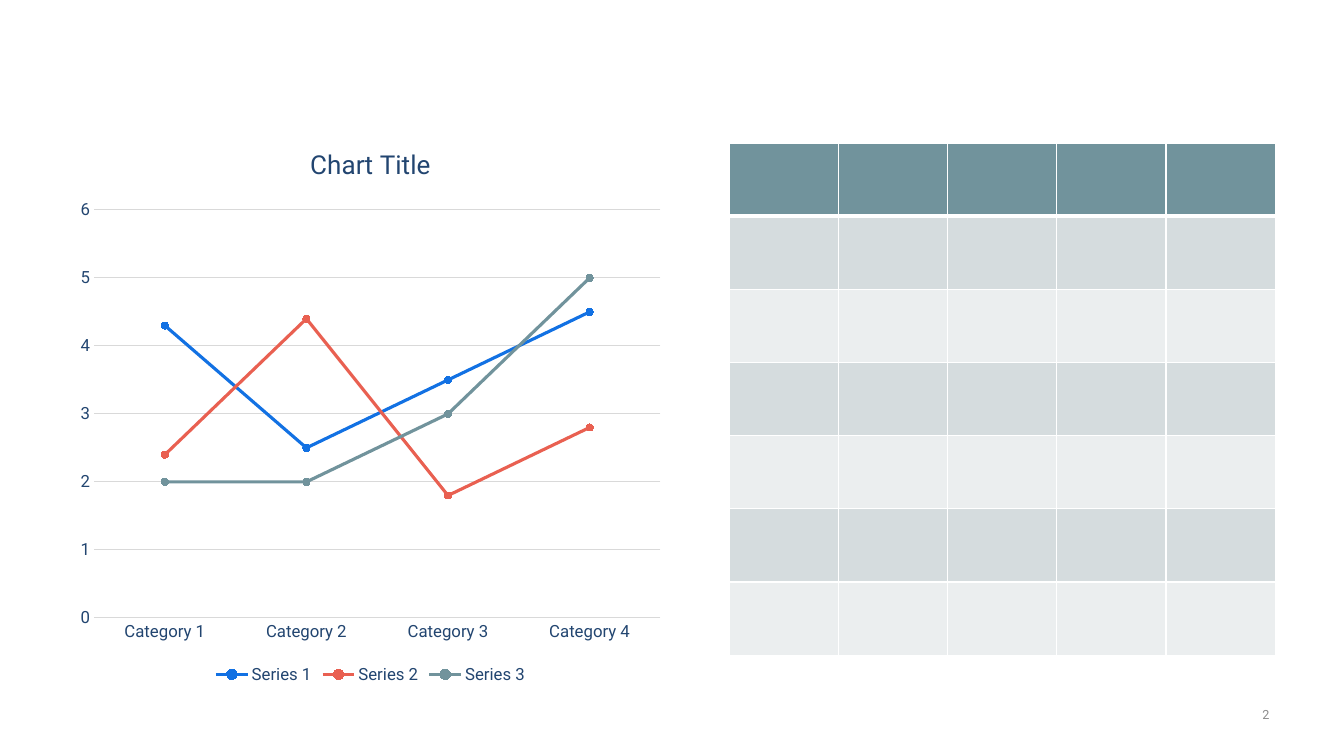
from lxml import etree
from pptx import Presentation
from pptx.chart.data import CategoryChartData
from pptx.dml.color import RGBColor
from pptx.enum.chart import XL_CHART_TYPE, XL_LEGEND_POSITION, XL_MARKER_STYLE, XL_TICK_MARK
from pptx.enum.text import PP_ALIGN
from pptx.oxml.ns import qn
from pptx.util import Inches, Pt

LINE_MARKERS = XL_CHART_TYPE.LINE_MARKERS
BOTTOM = XL_LEGEND_POSITION.BOTTOM
CIRCLE = XL_MARKER_STYLE.CIRCLE
NO_TICK = XL_TICK_MARK.NONE
RIGHT, CENTER = PP_ALIGN.RIGHT, PP_ALIGN.CENTER

FONT = "Roboto"
NAVY = RGBColor(0x22, 0x45, 0x70)
BLUE = RGBColor(0x12, 0x71, 0xE3)
CORAL = RGBColor(0xE9, 0x60, 0x51)
TEAL = RGBColor(0x71, 0x93, 0x9C)
BAND_DARK = RGBColor(0xD5, 0xDC, 0xDE)
BAND_LIGHT = RGBColor(0xEB, 0xEE, 0xEF)
GRID_GRAY = RGBColor(0xD9, 0xD9, 0xD9)
NUMBER_GRAY = RGBColor(0x8C, 0x8C, 0x8C)
WHITE = RGBColor(0xFF, 0xFF, 0xFF)


def write(frame, text, size, color, align):
    paragraph = frame.paragraphs[0]
    paragraph.alignment = align
    run = paragraph.add_run()
    run.text = text
    run.font.name = FONT
    run.font.size = Pt(size)
    run.font.bold = False
    run.font.color.rgb = color


def add_border(cell, side, width):
    line = etree.SubElement(cell._tc.get_or_add_tcPr(), qn("a:" + side), w=str(Pt(width)))
    fill = etree.SubElement(line, qn("a:solidFill"))
    etree.SubElement(fill, qn("a:srgbClr"), val=str(WHITE))


prs = Presentation()
prs.slide_width = Inches(13.33)
prs.slide_height = Inches(7.5)
slide = prs.slides.add_slide(prs.slide_layouts[6])

page_number = slide.shapes.add_textbox(Inches(9.59), Inches(7.01), Inches(3), Inches(0.23)).text_frame
page_number.word_wrap = True
page_number.margin_left = page_number.margin_right = 0
page_number.margin_top = page_number.margin_bottom = 0
write(page_number, "2", size=9, color=NUMBER_GRAY, align=RIGHT)

series_rows = [
    ("Series 1", (4.3, 2.5, 3.5, 4.5), BLUE),
    ("Series 2", (2.4, 4.4, 1.8, 2.8), CORAL),
    ("Series 3", (2, 2, 3, 5), TEAL),
]
trend_data = CategoryChartData()
trend_data.categories = [f"Category {n}" for n in range(1, 5)]
for name, values, color in series_rows:
    trend_data.add_series(name, values)

trend = slide.shapes.add_chart(
    LINE_MARKERS, Inches(0.68), Inches(1.25), Inches(5.99), Inches(5.58), trend_data
).chart
trend.font.name = FONT
trend.font.size = Pt(10)
trend.font.color.rgb = NAVY
trend.has_title = True
write(trend.chart_title.text_frame, "Chart Title", size=18.6, color=NAVY, align=CENTER)
trend.chart_title.include_in_layout = False
trend.has_legend = True
trend.legend.position = BOTTOM
trend.legend.include_in_layout = False
trend.plots[0].vary_by_categories = False

category_axis, value_axis = trend.category_axis, trend.value_axis
for axis in (category_axis, value_axis):
    axis.major_tick_mark = axis.minor_tick_mark = NO_TICK
for labels in (category_axis.tick_labels, value_axis.tick_labels, trend.legend):
    labels.font.name = FONT
    labels.font.size = Pt(12)
    labels.font.color.rgb = NAVY
value_axis.minimum_scale = 0
value_axis.maximum_scale = 6
value_axis.major_unit = 1
value_axis.has_major_gridlines = True
value_axis.format.line.fill.background()
for rule in (category_axis.format.line, value_axis.major_gridlines.format.line):
    rule.color.rgb = GRID_GRAY
    rule.width = Pt(0.75)

for series, (name, values, color) in zip(trend.plots[0].series, series_rows):
    series.smooth = False
    series.format.line.color.rgb = color
    series.format.line.width = Pt(2.25)
    series.marker.style = CIRCLE
    series.marker.size = 5
    series.marker.format.fill.solid()
    series.marker.format.fill.fore_color.rgb = color
    series.marker.format.line.color.rgb = color

grid = slide.shapes.add_table(7, 5, Inches(7.23), Inches(1.42), Inches(5.42), Inches(5.08)).table
for row_index, row in enumerate(grid.rows):
    if row_index == 0:
        row_color = TEAL
    else:
        row_color = BAND_DARK if row_index % 2 else BAND_LIGHT
    for cell in row.cells:
        add_border(cell, "lnL", 1)
        add_border(cell, "lnR", 1)
        add_border(cell, "lnT", 3 if row_index == 1 else 1)
        add_border(cell, "lnB", 3 if row_index == 0 else 1)
        cell.fill.solid()
        cell.fill.fore_color.rgb = row_color

prs.save("out.pptx")
